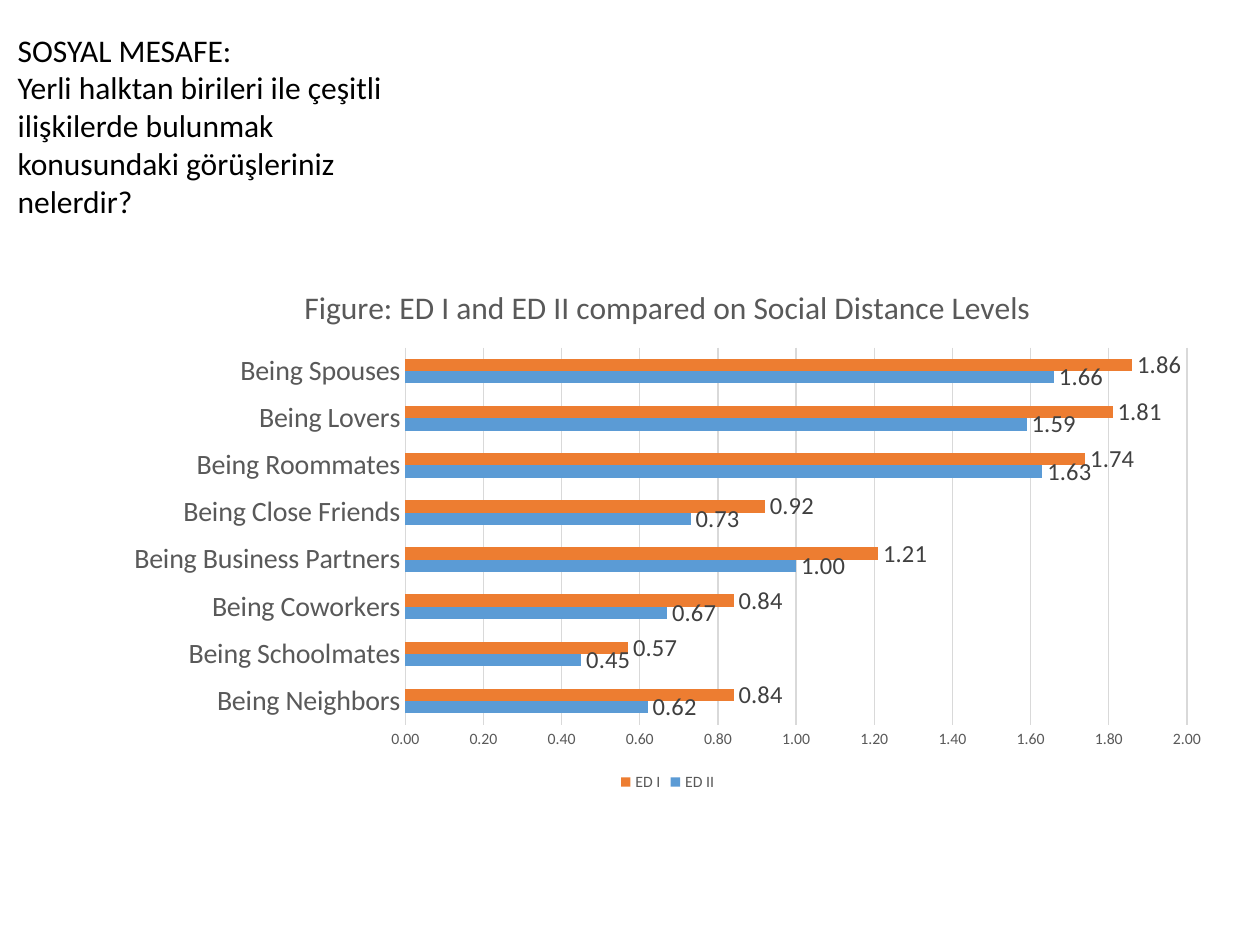
from dataclasses import dataclass

import pptx
import pptx.chart.data
import pptx.dml.color
import pptx.enum.chart
import pptx.util
from pptx.util import Pt


@dataclass(frozen=True)
class Theme:
    font: str = "Calibri"
    black: str = "000000"
    label: str = "404040"
    muted: str = "595959"
    grid: str = "D9D9D9"
    blue: str = "5B9BD5"
    orange: str = "ED7D31"
    heading_size: int = 18
    category_size: int = 16
    label_size: int = 14
    small_size: int = 9


THEME = Theme()

RELATIONS = ["Neighbors", "Schoolmates", "Coworkers", "Business Partners",
             "Close Friends", "Roommates", "Lovers", "Spouses"]
SERIES = [
    ("ED II", THEME.blue, [0.62, 0.45, 0.67, 1.00, 0.73, 1.63, 1.59, 1.66]),
    ("ED I", THEME.orange, [0.84, 0.57, 0.84, 1.21, 0.92, 1.74, 1.81, 1.86]),
]


def rgb(value):
    return pptx.dml.color.RGBColor.from_string(value)


def style_font(font, size, color):
    font.name = THEME.font
    font.size = Pt(size)
    font.bold = False
    font.color.rgb = rgb(color)


def style_line(line, color):
    line.color.rgb = rgb(color)
    line.width = Pt(0.75)


def add_question(slide, left, top, width, height):
    shape = slide.shapes.add_textbox(Pt(left), Pt(top), Pt(width), Pt(height))
    frame = shape.text_frame
    frame.word_wrap = True
    frame.text = ("SOSYAL MESAFE:\nYerli halktan birileri ile çeşitli ilişkilerde "
                  "bulunmak konusundaki görüşleriniz nelerdir?")
    for paragraph in frame.paragraphs:
        for run in paragraph.runs:
            style_font(run.font, THEME.heading_size, THEME.black)


def style_axes(chart):
    categories, values = chart.category_axis, chart.value_axis
    for axis, size in ((categories, THEME.category_size), (values, THEME.small_size)):
        axis.major_tick_mark = pptx.enum.chart.XL_TICK_MARK.NONE
        style_font(axis.tick_labels.font, size, THEME.muted)
    style_line(categories.format.line, THEME.grid)
    values.minimum_scale, values.maximum_scale, values.major_unit = 0, 2, 0.2
    values.format.line.fill.background()
    values.tick_labels.number_format = "0.00"
    values.tick_labels.number_format_is_linked = False
    style_line(values.major_gridlines.format.line, THEME.grid)


def style_series(plot):
    plot.gap_width = 182
    plot.overlap = 0
    plot.vary_by_categories = False
    for series, (_, color, _) in zip(plot.series, SERIES):
        series.format.fill.solid()
        series.format.fill.fore_color.rgb = rgb(color)
        labels = series.data_labels
        labels.show_value = True
        labels.number_format = "0.00"
        labels.number_format_is_linked = False
        labels.position = pptx.enum.chart.XL_LABEL_POSITION.OUTSIDE_END
        style_font(labels.font, THEME.label_size, THEME.label)


def add_distance_chart(slide, left, top, width, height):
    data = pptx.chart.data.CategoryChartData(number_format="0.00")
    data.categories = [f"Being {relation}" for relation in RELATIONS]
    for name, _, values in SERIES:
        data.add_series(name, values)
    chart = slide.shapes.add_chart(
        pptx.enum.chart.XL_CHART_TYPE.BAR_CLUSTERED,
        Pt(left), Pt(top), Pt(width), Pt(height), data).chart
    style_font(chart.font, 10, THEME.black)

    chart.has_title = True
    title = chart.chart_title
    title.include_in_layout = False
    title.text_frame.text = "Figure: ED I and ED II compared on Social Distance Levels"
    style_font(title.text_frame.paragraphs[0].runs[0].font,
               THEME.heading_size, THEME.muted)

    chart.has_legend = True
    chart.legend.position = pptx.enum.chart.XL_LEGEND_POSITION.BOTTOM
    chart.legend.include_in_layout = False
    style_font(chart.legend.font, THEME.small_size, THEME.muted)
    style_axes(chart)
    style_series(chart.plots[0])


def main():
    presentation = pptx.Presentation()
    presentation.slide_width, presentation.slide_height = Pt(720), Pt(540)
    slide = presentation.slides.add_slide(presentation.slide_layouts[6])
    add_question(slide, 3, 14, 224, 117)
    add_distance_chart(slide, 64, 150, 635, 305)
    presentation.save("out.pptx")


if __name__ == "__main__":
    main()
